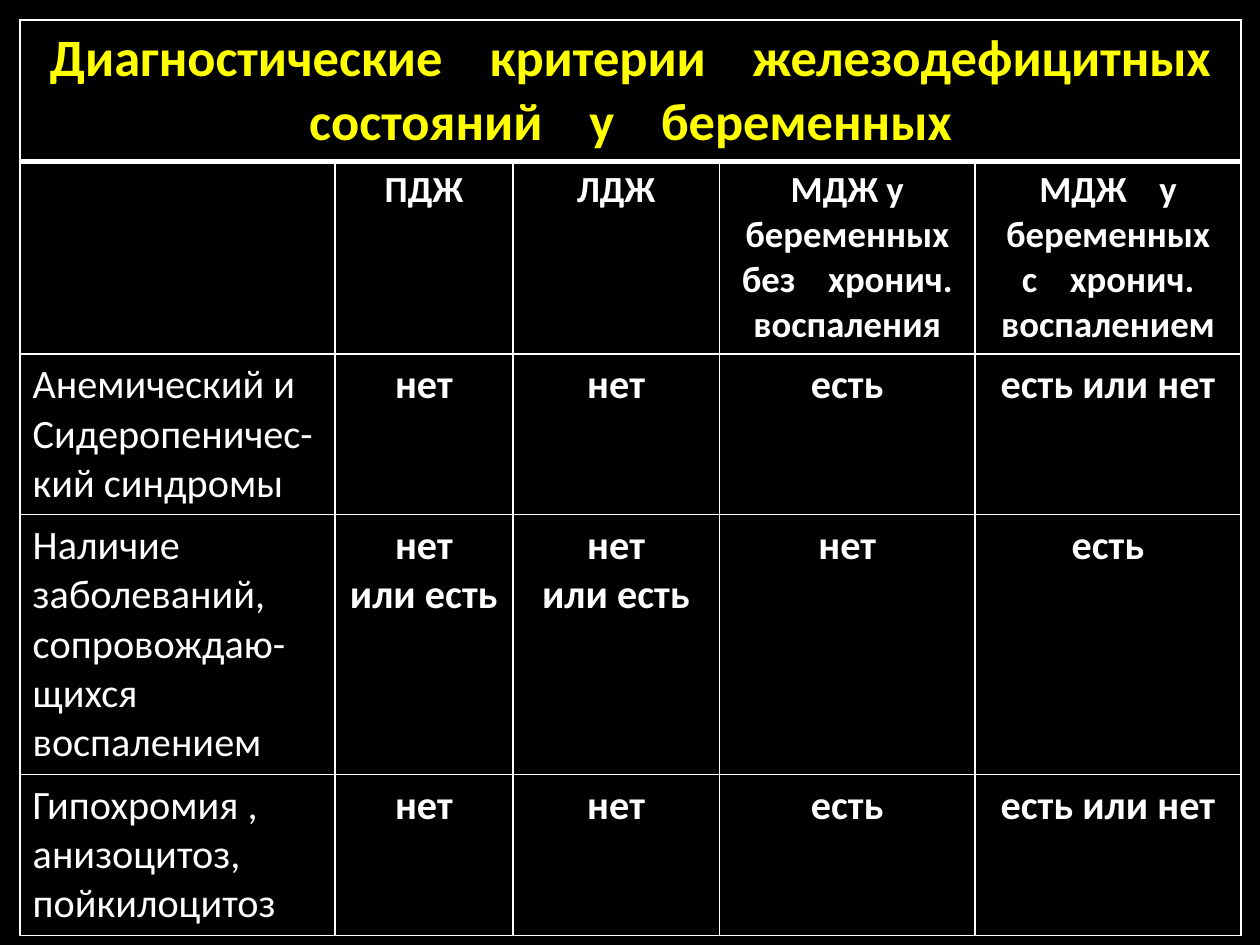
import pptx
import pptx.util
import pptx.dml.color
import pptx.enum.text
import pptx.oxml
import pptx.oxml.ns
from dataclasses import dataclass

Inches = pptx.util.Inches
Pt = pptx.util.Pt
RGB = pptx.dml.color.RGBColor.from_string
ALIGN = pptx.enum.text.PP_ALIGN


@dataclass
class Theme:
    font: str = "Calibri"
    back: str = "000000"
    text: str = "FFFFFF"
    title: str = "FFFF00"
    large: int = 30
    head: int = 21
    body: int = 23
    thin: int = 1
    thick: int = 3


theme = Theme()

# Rows of cells: "\n" parts paragraphs, "_" is a wide word gap
rows = [
    ["Диагностические_критерии_железодефицитных_состояний_у_беременных",
     "", "", "", ""],
    ["", "ПДЖ", "ЛДЖ",
     "МДЖ у\nбеременных без_хронич.\nвоспаления",
     "МДЖ_у\nбеременных\nс_хронич. воспалением"],
    ["Анемический и\nСидеропеничес-кий синдромы",
     "нет", "нет", "есть", "есть или нет"],
    ["Наличие заболеваний,\nсопровождаю-щихся воспалением",
     "нет\nили есть", "нет\nили есть", "нет", "есть"],
    ["Гипохромия ,\nанизоцитоз,\nпойкилоцитоз",
     "нет", "нет", "есть", "есть или нет"],
]
widths = [2.5, 1.41, 1.64, 2.03, 2.11]
heights = [1.12, 1.53, 1.27, 2.06, 1.28]


def write(cell, text, size, color, bold, align):
    """Fill a cell, run by run; wide gaps are spaces with added tracking."""
    for n, line in enumerate(text.split("\n")):
        frame = cell.text_frame
        para = frame.paragraphs[0] if n == 0 else frame.add_paragraph()
        para.alignment = align
        for part in line.replace("_", "\t \t").split("\t"):
            run = para.add_run()
            run.text = part
            run.font.name = theme.font
            run.font.size = Pt(size)
            run.font.bold = bold
            run.font.color.rgb = RGB(color)
            if part == " ":
                run.font._element.set("spc", str(size * 66))


def border(cell, side, width):
    """Draw one solid edge of a cell."""
    space = pptx.oxml.ns.nsdecls("a")
    cell._tc.get_or_add_tcPr().append(pptx.oxml.parse_xml(
        f'<a:ln{side} {space} w="{Pt(width)}"><a:solidFill>'
        f'<a:srgbClr val="{theme.text}"/></a:solidFill></a:ln{side}>'))


# Slide and background
deck = pptx.Presentation()
deck.slide_width, deck.slide_height = Inches(10), Inches(7.5)
slide = deck.slides.add_slide(deck.slide_layouts[6])
slide.background.fill.solid()
slide.background.fill.fore_color.rgb = RGB(theme.back)

# Table grid
table = slide.shapes.add_table(
    len(rows), len(widths), Inches(0.16), Inches(0.16),
    Inches(sum(widths)), Inches(sum(heights))).table
table.first_row = table.horz_banding = False
for col, width in zip(table.columns, widths):
    col.width = Inches(width)
for row, height in zip(table.rows, heights):
    row.height = Inches(height)
table.cell(0, 0).merge(table.cell(0, len(widths) - 1))

# Cells: title row, head row, then body rows with plain labels
for r, row in enumerate(rows):
    for c, text in enumerate(row):
        cell = table.cell(r, c)
        for side in "LRTB":
            heavy = (r, side) in [(0, "B"), (1, "T")]
            border(cell, side, theme.thick if heavy else theme.thin)
        cell.fill.solid()
        cell.fill.fore_color.rgb = RGB(theme.back)
        label = r > 1 and c == 0
        if text:
            write(cell, text,
                  [theme.large, theme.head][r] if r < 2 else theme.body,
                  theme.title if r == 0 else theme.text,
                  not label, ALIGN.LEFT if label else ALIGN.CENTER)

deck.save("out.pptx")
